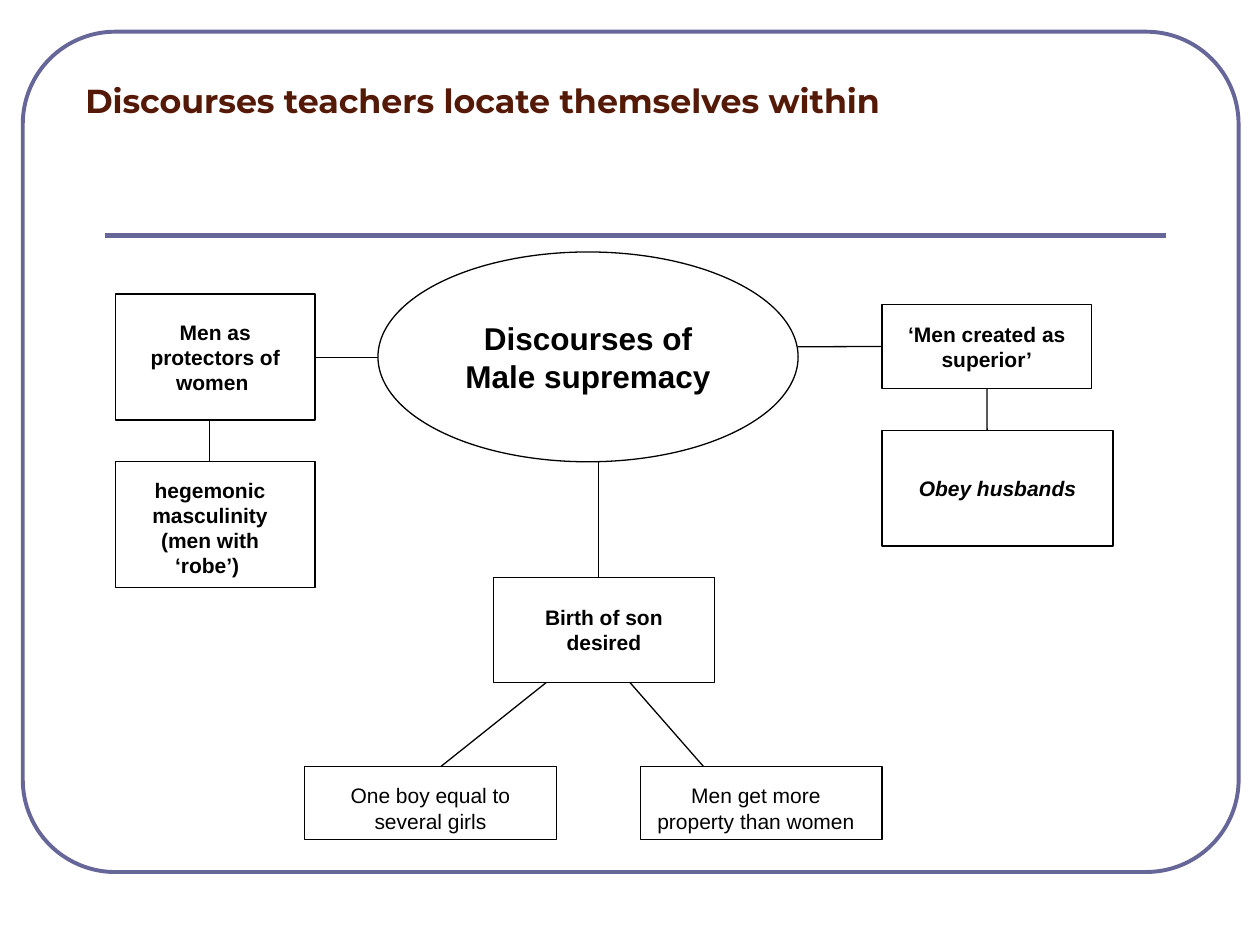
from typing import NamedTuple, Optional

from lxml.etree import SubElement
from pptx import Presentation
from pptx.dml.color import RGBColor
from pptx.enum.shapes import MSO_CONNECTOR as Link, MSO_SHAPE as Kind
from pptx.enum.text import MSO_ANCHOR as Anchor, PP_ALIGN as Align
from pptx.oxml.ns import qn
from pptx.util import Cm, Pt

BLACK = RGBColor(0x00, 0x00, 0x00)
SLATE = RGBColor(0x66, 0x66, 0x99)
BROWN = RGBColor(0x55, 0x1A, 0x07)
WHITE = RGBColor(0xFF, 0xFF, 0xFF)


class Area(NamedTuple):
    left: float
    top: float
    width: float
    height: float


class Node(NamedTuple):
    name: str
    area: Area
    text: str = ""
    size: int = 12
    slant: bool = False
    kind: Kind = Kind.RECTANGLE


class Label(NamedTuple):
    area: Area
    text: str
    bold: bool = False


class Joint(NamedTuple):
    name: str
    side: int


class Edge(NamedTuple):
    start: tuple[float, float]
    end: tuple[float, float]
    tail: Optional[Joint] = None
    head: Optional[Joint] = None


NODES = [
    Node("centre", Area(7.62, 5.08, 8.47, 4.23), "Discourses of Male supremacy", 18, kind=Kind.OVAL),
    Node("created", Area(17.78, 6.14, 4.23, 1.69), "‘Men created as superior’"),
    Node("obey", Area(17.78, 8.68, 4.66, 2.33), "Obey husbands", slant=True),
    Node("birth", Area(9.95, 11.64, 4.45, 2.12), "Birth of son desired"),
    Node("protect", Area(2.33, 5.93, 4.02, 2.54), "Men as protectors of women "),
    Node("robe", Area(2.33, 9.31, 4.02, 2.54)),
    Node("boy", Area(6.14, 15.45, 5.08, 1.48)),
    Node("estate", Area(12.91, 15.45, 4.87, 1.48)),
]

LABELS = [
    Label(Area(6.14, 15.66, 5.08, 1.27), "One boy equal to several girls"),
    Label(Area(12.91, 15.66, 4.66, 1.27), "Men get more property than women"),
    Label(Area(2.33, 9.5, 3.81, 2.31), "hegemonic masculinity (men with ‘robe’) ", True),
]

EDGES = [
    Edge((16.09, 6.99), (17.78, 6.99), head=Joint("created", 1)),
    Edge((19.9, 7.83), (19.9, 8.68), tail=Joint("created", 2)),
    Edge((12.07, 9.31), (12.07, 11.64)),
    Edge((6.35, 7.2), (7.62, 7.2), tail=Joint("protect", 3)),
    Edge((4.23, 8.47), (4.23, 9.31)),
    Edge((11.01, 13.76), (8.89, 15.45)),
    Edge((12.7, 13.76), (14.18, 15.45)),
]


def write(frame, text: str, size: int, bold: bool = True, slant: bool = False,
          font: str = "Arial", color: RGBColor = BLACK, align: Align = Align.CENTER) -> None:
    frame.word_wrap = True
    para = frame.paragraphs[0]
    para.alignment = align
    run = para.add_run()
    run.text = text
    run.font.name = font
    run.font.size = Pt(size)
    run.font.bold = bold
    run.font.italic = slant
    run.font.color.rgb = color


def draw_shape(slide, kind: Kind, area: Area, color: RGBColor, weight: float):
    shape = slide.shapes.add_shape(kind, *map(Cm, area))
    shape.shadow.inherit = False
    shape.fill.background()
    shape.line.color.rgb = color
    shape.line.width = Pt(weight)
    return shape


def draw_node(slide, node: Node):
    shape = draw_shape(slide, node.kind, node.area, BLACK, 0.75)
    if node.text:
        shape.text_frame.vertical_anchor = Anchor.MIDDLE
        write(shape.text_frame, node.text, node.size, slant=node.slant)
    return shape


def draw_text(slide, area: Area, anchor: Anchor = Anchor.TOP):
    frame = slide.shapes.add_textbox(*map(Cm, area)).text_frame
    frame.vertical_anchor = anchor
    return frame


def draw_edge(slide, edge: Edge, nodes: dict, color: RGBColor = BLACK, weight: float = 0.75) -> None:
    line = slide.shapes.add_connector(Link.STRAIGHT, *map(Cm, edge.start + edge.end))
    line.line.color.rgb = color
    line.line.width = Pt(weight)
    SubElement(line._element.spPr, qn("a:effectLst"))
    if edge.tail:
        line.begin_connect(nodes[edge.tail.name], edge.tail.side)
    if edge.head:
        line.end_connect(nodes[edge.head.name], edge.head.side)


def main() -> None:
    deck = Presentation()
    deck.slide_width, deck.slide_height = Cm(25.4), Cm(19.05)
    slide = deck.slides.add_slide(deck.slide_layouts[6])
    slide.background.fill.solid()
    slide.background.fill.fore_color.rgb = WHITE

    frame = draw_shape(slide, Kind.ROUNDED_RECTANGLE, Area(0.46, 0.64, 24.51, 16.94), SLATE, 2.25)
    frame.adjustments[0] = 0.11
    draw_edge(slide, Edge((2.12, 4.75), (23.5, 4.75)), {}, SLATE, 3)
    title = draw_text(slide, Area(1.47, 0, 22.66, 2.54), Anchor.BOTTOM)
    write(title, "Discourses teachers locate themselves within", 19,
          font="Montserrat", color=BROWN, align=Align.LEFT)

    nodes = {node.name: draw_node(slide, node) for node in NODES}
    for label in LABELS:
        write(draw_text(slide, label.area), label.text, 12, label.bold)
    for edge in EDGES:
        draw_edge(slide, edge, nodes)
    deck.save("out.pptx")


if __name__ == "__main__":
    main()
